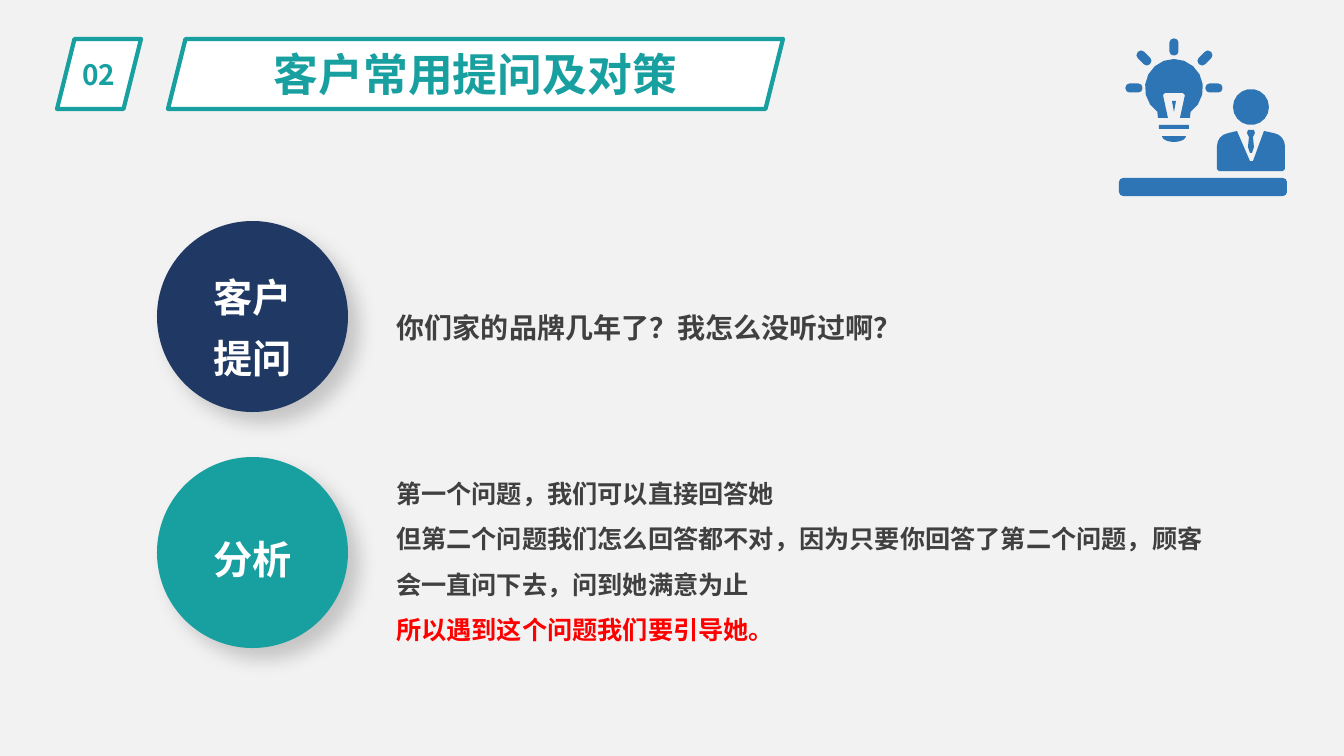
from math import cos, sin, radians
from lxml.etree import SubElement
from pptx import Presentation
from pptx.dml.color import RGBColor
from pptx.enum.shapes import MSO_SHAPE
from pptx.enum.text import MSO_ANCHOR, MSO_AUTO_SIZE, PP_ALIGN
from pptx.oxml.ns import qn
from pptx.util import Pt

PX = 914400 / 100.8
FONT = "Noto Sans CJK SC"
COLORS = {"paper": "F2F2F2", "white": "FFFFFF", "navy": "203864", "teal": "189FA0",
          "text": "404040", "red": "FF0000", "blue": "2E75B6"}


def px(*vals):
    return [round(v * PX) for v in vals]


def rgb(name):
    return RGBColor.from_string(COLORS[name])


def place(shape, box):
    shape.left, shape.top, shape.width, shape.height = px(*box)


def paint(shape, fill, line=None):
    shape.fill.solid()
    shape.fill.fore_color.rgb = rgb(fill)
    if line:
        shape.line.color.rgb = rgb(line)
        shape.line.width = Pt(3)
    else:
        shape.line.fill.background()


def write(shape, lines, size, color, align=PP_ALIGN.LEFT, space=1.0,
          anchor=MSO_ANCHOR.TOP, wrap=True, last=None):
    frame = shape.text_frame
    frame.word_wrap = wrap
    frame.auto_size = MSO_AUTO_SIZE.NONE
    frame.vertical_anchor = anchor
    frame.text = "\n".join(lines)
    for para in frame.paragraphs:
        para.alignment = align
        para.line_spacing = space
        para.space_before = Pt(0)
        font = para.runs[0].font
        font.size, font.bold, font.name = Pt(size), True, FONT
        font.color.rgb = rgb(color)
        SubElement(font._element, qn("a:ea"), typeface=FONT)
    if last:
        font.color.rgb = rgb(last)


# Heading: number tag and title in matching slanted frames
def heading(slide, box, num, title):
    left, top, width, high = box
    tag_box = (left, top, 84, high)
    head_box = (left + 111, top, width - 111, high)
    head = slide.shapes.title
    place(head, head_box)
    for spot in (tag_box, head_box):
        plate = slide.shapes.add_shape(MSO_SHAPE.PARALLELOGRAM, *px(*spot))
        plate.shadow.inherit = False
        paint(plate, "white", "teal")
        head._element.addprevious(plate._element)
        if spot is tag_box:
            tag = plate
    for shape, words, size in ((tag, num, 20), (head, title, 32)):
        write(shape, [words], size, "teal", align=PP_ALIGN.CENTER,
              anchor=MSO_ANCHOR.MIDDLE)


# Round badge with a soft shadow and its label
def badge(slide, box, lines, fill, drop, high):
    left, top, size = box
    group = slide.shapes.add_group_shape()
    disc = group.shapes.add_shape(MSO_SHAPE.OVAL, *px(left, top, size, size))
    paint(disc, fill)
    effects = SubElement(disc._element.spPr, qn("a:effectLst"))
    shade = SubElement(effects, qn("a:outerShdw"), blurRad=str(Pt(14)),
                       dist=str(Pt(11)), dir="2700000", algn="tl", rotWithShape="0")
    tint = SubElement(shade, qn("a:srgbClr"), val="000000")
    SubElement(tint, qn("a:alpha"), val="18000")
    label = group.shapes.add_textbox(*px(left + 46, top + drop, 100, high))
    write(label, lines, 28, "white", align=PP_ALIGN.CENTER, space=1.3)


# Question beside the first badge
def question(slide, box, words):
    note = slide.shapes.add_textbox(*px(*box))
    write(note, [words], 20, "text", space=1.5, wrap=False)


# Analysis list beside the second badge
def answer(slide, box, lines):
    body = slide.placeholders[1]
    place(body, box)
    write(body, lines, 18, "text", space=1.5, last="red")
    for para in body.text_frame.paragraphs:
        props = para._p.get_or_add_pPr()
        props.set("marL", "0")
        props.set("indent", "0")
        SubElement(props, qn("a:buNone"))


def arc(x, y, r, start=0, end=360, tall=None):
    steps = max(2, (end - start) // 20)
    turns = [radians(start + (end - start) * i / steps) for i in range(steps + 1)]
    return [(x + r * cos(t), y + (tall or r) * sin(t)) for t in turns]


def pill(x, y, width, high, turn=0):
    r = 4
    dx, dy, t = width / 2 - r, high / 2 - r, radians(turn)
    ends = [(dx, dy), (-dx, dy), (-dx, -dy), (dx, -dy)]
    pts = [(a + r * cos(radians(deg)), b + r * sin(radians(deg)))
           for i, (a, b) in enumerate(ends) for deg in (90 * i, 90 * i + 45, 90 * i + 90)]
    return [(x + a * cos(t) - b * sin(t), y + a * sin(t) + b * cos(t)) for a, b in pts]


# Adviser at a desk with a glowing bulb
def icon(slide, left, top):
    rays = [(55, 8, 90), (25, 19, 45), (86, 19, 135), (15, 49, 0), (95, 49, 0)]
    bulb = arc(55, 49, 29, 125, 415) + [(71, 79), (61, 79), (66, 56), (64, 54),
                                        (46, 54), (44, 56), (49, 79), (39, 79)]
    coat = ([(118, 92), (131, 122), (134, 122), (145, 92)] + arc(153, 107, 13, -80, 0)
            + [(166, 130), (164, 132), (100, 132), (98, 130)]
            + arc(111, 107, 13, 180, 260))
    tie = [(129, 91), (135, 91), (136, 94), (134, 98), (135, 108),
           (133, 114), (131, 114), (129, 108), (130, 98), (128, 94)]
    parts = [pill(84, 148, 168, 18), bulb, coat, tie, arc(132, 68, 18),
             [(53, 62), (57, 62), (55, 73)],
             [(40, 86), (70, 86), (70, 90), (40, 90)],
             arc(55, 97, 12, 0, 180, tall=6)]
    parts += [pill(x, y, 17, 9, turn) for x, y, turn in rays]
    pen = None
    for part in parts:
        first, *rest = [px(*point) for point in part]
        if pen:
            pen.move_to(*first)
        else:
            pen = slide.shapes.build_freeform(*first, scale=1.0)
        pen.add_line_segments(rest, close=True)
    shape = pen.convert_to_shape(*px(left, top))
    shape.shadow.inherit = False
    paint(shape, "blue")


def main():
    deck = Presentation()
    deck.slide_width, deck.slide_height = px(1344, 756)
    slide = deck.slides.add_slide(deck.slide_layouts[1])
    slide.background.fill.solid()
    slide.background.fill.fore_color.rgb = rgb("paper")
    heading(slide, (57, 39, 726, 70), "02", "客户常用提问及对策")
    badge(slide, (157, 221, 191), ["客户", "提问"], "navy", drop=33, high=128)
    badge(slide, (157, 457, 191), ["分析"], "teal", drop=59, high=66)
    question(slide, (387, 289, 529, 55), "你们家的品牌几年了？我怎么没听过啊？")
    answer(slide, (386, 458, 843, 194), [
        "第一个问题，我们可以直接回答她",
        "但第二个问题我们怎么回答都不对，因为只要你回答了第二个问题，"
        "顾客会一直问下去，问到她满意为止",
        "所以遇到这个问题我们要引导她。"])
    icon(slide, 1119, 39)
    deck.save("out.pptx")


if __name__ == "__main__":
    main()
